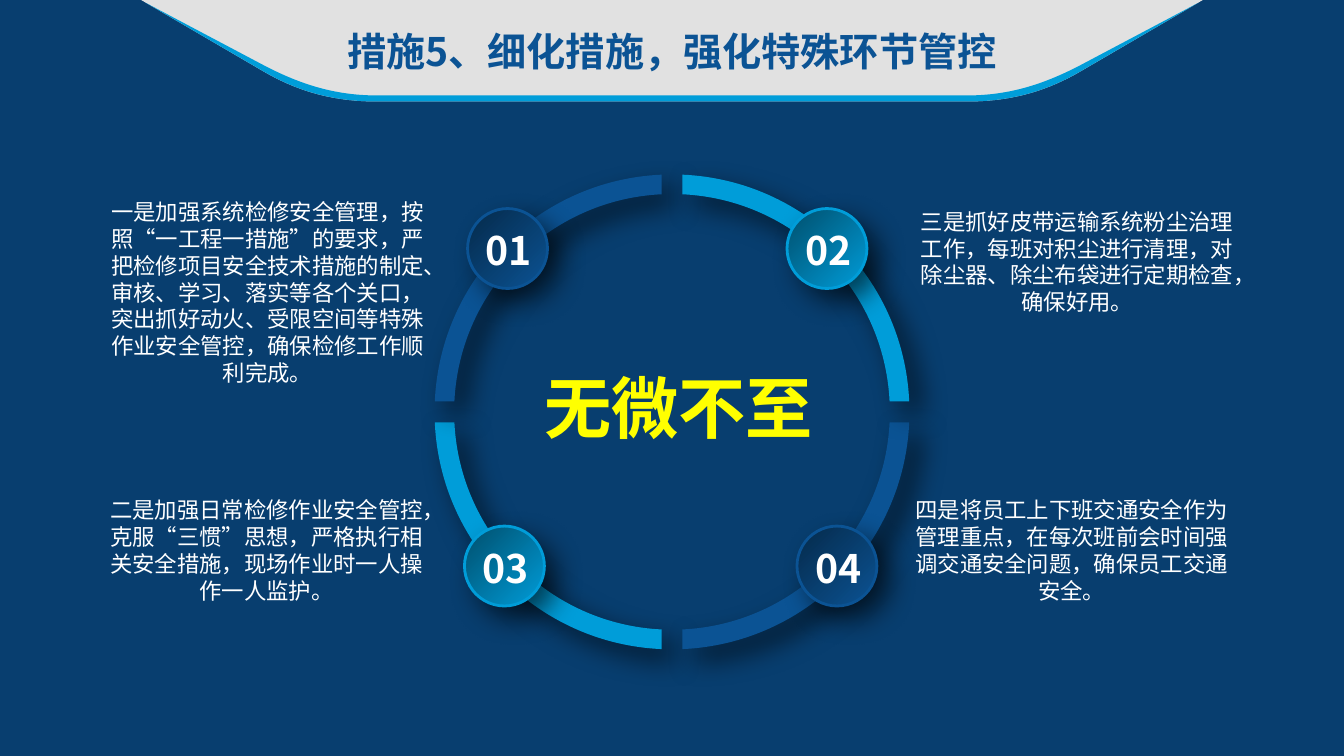
from dataclasses import dataclass
from math import asin, cos, pi, sin, tan

from lxml import etree
from pptx import Presentation
from pptx.dml.color import RGBColor
from pptx.enum.shapes import MSO_SHAPE
from pptx.enum.text import MSO_AUTO_SIZE, PP_ALIGN
from pptx.oxml.ns import qn
from pptx.util import Pt

ELLIPSE = MSO_SHAPE.OVAL
CENTER = PP_ALIGN.CENTER
LEFT = PP_ALIGN.LEFT
GROW = MSO_AUTO_SIZE.SHAPE_TO_FIT_TEXT


@dataclass(frozen=True)
class Theme:
    font: str = "Noto Sans CJK SC"
    background: str = "083E6F"
    banner: str = "E1E1E1"
    bright: str = "009DD9"
    bright_shade: str = "004E6C"
    deep: str = "0B5394"
    deep_shade: str = "052A4A"
    body: str = "FFFFFF"
    slogan: str = "FFFF00"
    shadow: str = "000000"
    title_size: int = 28
    slogan_size: int = 48
    body_size: int = 16


def mirrored(points, axis_x):
    return tuple((2 * axis_x - x, y) for x, y in points)


def banner_edge(tip, shoulder, upper_control, lower_control, foot, axis_x):
    right_curve = mirrored((lower_control, upper_control, shoulder), axis_x)
    return [(shoulder,), (upper_control, lower_control, foot), mirrored((foot,), axis_x),
            right_curve, mirrored((tip,), axis_x)]


def quarter_arc(center, radius, half_gap, side_x, side_y):
    first = asin(half_gap / radius)
    last = pi / 2 - first
    handle = 4 / 3 * tan((last - first) / 4)
    offsets = ((cos(first), sin(first)),
               (cos(first) - handle * sin(first), sin(first) + handle * cos(first)),
               (cos(last) + handle * sin(last), sin(last) - handle * cos(last)),
               (cos(last), sin(last)))
    return [(center[0] + side_x * radius * x, center[1] + side_y * radius * y)
            for x, y in offsets]


class SlideBuilder:
    def __init__(self, slide, theme):
        self.slide = slide
        self.theme = theme

    def background(self):
        fill = self.slide.background.fill
        fill.solid()
        fill.fore_color.rgb = RGBColor.from_string(self.theme.background)

    def cast_shadow(self, shape):
        effects = shape.element.spPr.find(qn("a:effectLst"))
        outer = etree.SubElement(effects, qn("a:outerShdw"), blurRad=str(Pt(20)),
                                 dist=str(Pt(12)), dir="2700000", algn="tl", rotWithShape="0")
        color = etree.SubElement(outer, qn("a:srgbClr"), val=self.theme.shadow)
        etree.SubElement(color, qn("a:alpha"), val="60000")

    def outline(self, start, segments, color, shadow=False):
        builder = self.slide.shapes.build_freeform(Pt(start[0]), Pt(start[1]))
        builder.add_line_segments([(Pt(x), Pt(y)) for x, y in (s[-1] for s in segments)],
                                  close=True)
        shape = builder.convert_to_shape()
        for drawn, segment in zip(list(shape.element.iter(qn("a:lnTo"))), segments):
            if len(segment) == 3:
                curve = etree.Element(qn("a:cubicBezTo"))
                for x, y in segment:
                    etree.SubElement(curve, qn("a:pt"), x=str(Pt(x) - shape.left),
                                     y=str(Pt(y) - shape.top))
                drawn.getparent().replace(drawn, curve)
        shape.shadow.inherit = False
        shape.fill.solid()
        shape.fill.fore_color.rgb = RGBColor.from_string(color)
        shape.line.fill.background()
        if shadow:
            self.cast_shadow(shape)

    def badge(self, left, top, diameter, color, shade):
        shape = self.slide.shapes.add_shape(ELLIPSE, Pt(left), Pt(top), Pt(diameter), Pt(diameter))
        shape.shadow.inherit = False
        shape.fill.gradient()
        shape.fill.gradient_angle = 135
        for stop, stop_color in zip(shape.fill.gradient_stops, (color, shade)):
            stop.color.rgb = RGBColor.from_string(stop_color)
        shape.line.color.rgb = RGBColor.from_string(color)
        shape.line.width = Pt(2)
        self.cast_shadow(shape)

    def text(self, content, left, top, width, height, size, color,
             bold=False, align=CENTER, wrap=True):
        frame = self.slide.shapes.add_textbox(Pt(left), Pt(top), Pt(width), Pt(height)).text_frame
        frame.word_wrap = wrap
        frame.auto_size = GROW
        paragraph = frame.paragraphs[0]
        paragraph.alignment = align
        run = paragraph.add_run()
        run.text = content
        run.font.name = self.theme.font
        run.font.size = Pt(size)
        run.font.bold = bold
        run.font.color.rgb = RGBColor.from_string(color)
        latin = run.font._element.find(qn("a:latin"))
        latin.addnext(etree.Element(qn("a:ea"), typeface=self.theme.font))


def main():
    theme = Theme()
    deck = Presentation()
    deck.slide_width, deck.slide_height = Pt(960), Pt(540)
    page = SlideBuilder(deck.slides.add_slide(deck.slide_layouts[6]), theme)
    page.background()

    middle = 480
    lower_edge = ((186, 49.7), (212.4, 65.5), (238.3, 72.5), (269.3, 72.5))
    upper_edge = ((186, 45.4), (213, 59.8), (238.3, 68.2), (269.3, 68.2))
    banner_tip, trim_tip = (100.8, 0), (104.4, 2.2)
    page.outline(banner_tip, banner_edge(banner_tip, *lower_edge, middle), theme.banner)
    trim_bottom = banner_edge(trim_tip, *lower_edge, middle)
    trim_top = [mirrored(segment, middle)
                for segment in banner_edge(trim_tip, *upper_edge, middle)]
    page.outline(trim_tip, trim_bottom + trim_top[:-1], theme.bright)
    page.text("措施5、细化措施，强化特殊环节管控", 226.5, 15.8, 506.9, 41,
              theme.title_size, theme.deep, bold=True)

    ring_center = (middle, 294.2)
    bright = (theme.bright, theme.bright_shade)
    deep = (theme.deep, theme.deep_shade)
    for side_x, side_y, color in ((-1, 1, theme.bright), (1, 1, theme.deep),
                                  (-1, -1, theme.deep), (1, -1, theme.bright)):
        outer = quarter_arc(ring_center, 169.6, 7.5, side_x, side_y)
        inner = quarter_arc(ring_center, 155.6, 7.5, side_x, side_y)[::-1]
        page.outline(outer[0], [outer[1:], inner[:1], inner[1:]], color, shadow=True)

    for number, left, top, colors in (("02", 562.2, 149, bright), ("01", 334, 149, deep),
                                      ("04", 569.3, 375.8, deep), ("03", 331.8, 375.8, bright)):
        page.badge(left, top, 57.1, *colors)
        page.text(number, left + 5.8, top + 9.4, 49.7, 41, theme.title_size, theme.body,
                  bold=True, align=LEFT, wrap=False)

    page.text("无微不至", 324, 257.8, 321.8, 65.5, theme.slogan_size, theme.slogan, bold=True)

    measures = (
        ("一是加强系统检修安全管理，按照“一工程一措施”的要求，严把检修项目安全技术措施的制定、"
         "审核、学习、落实等各个关口，突出抓好动火、受限空间等特殊作业安全管控，确保检修工作顺利完成。",
         71.3, 138, 143.3),
        ("二是加强日常检修作业安全管控，克服“三惯”思想，严格执行相关安全措施，"
         "现场作业时一人操作一人监护。", 70.6, 351.1, 85),
        ("三是抓好皮带运输系统粉尘治理工作，每班对积尘进行清理，对除尘器、"
         "除尘布袋进行定期检查，确保好用。", 649.6, 144.9, 85),
        ("四是将员工上下班交通安全作为管理重点，在每次班前会时间强调交通安全问题，"
         "确保员工交通安全。", 645.7, 351.1, 85),
    )
    for content, left, top, height in measures:
        page.text(content, left, top, 239.8, height, theme.body_size, theme.body)

    deck.save("out.pptx")


if __name__ == "__main__":
    main()
